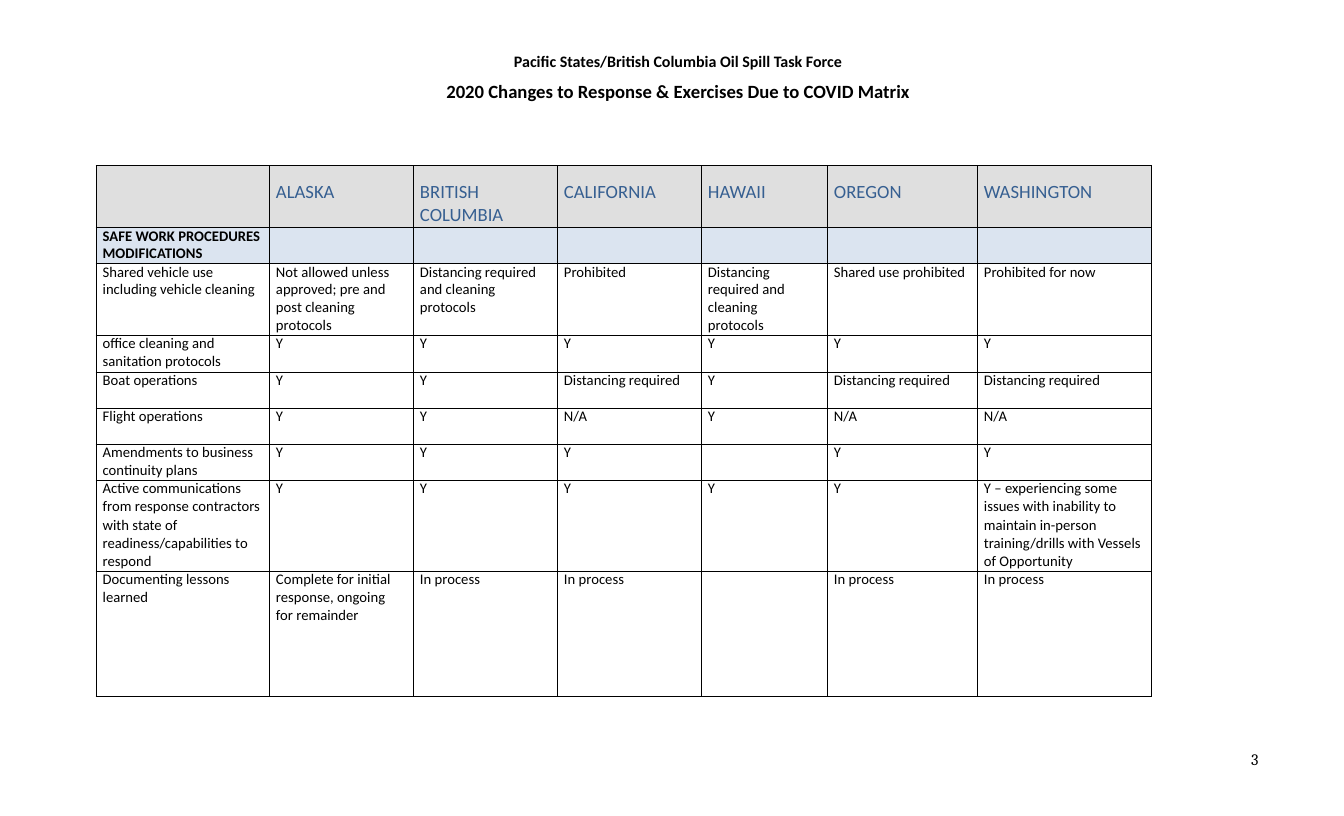
import pptx
import pptx.dml.color
import pptx.enum.text
import pptx.oxml
import pptx.oxml.ns
import pptx.util

Pt = pptx.util.Pt
ALIGN = pptx.enum.text.PP_ALIGN

COLUMNS = [130, 108, 108, 108, 94.5, 112.5, 130.5]
HEIGHTS = [46.5, 27, 54, 27.5, 27, 27.5, 27, 68, 94]
HEADINGS = ["", "ALASKA", "BRITISH COLUMBIA", "CALIFORNIA", "HAWAII", "OREGON", "WASHINGTON"]
SECTION = ["SAFE WORK PROCEDURES MODIFICATIONS"] + [""] * 6
SHARED = "Distancing required"
PROCEDURES = [
    ["Shared vehicle use including vehicle cleaning",
     "Not allowed unless approved; pre and\npost cleaning protocols",
     "Distancing required and cleaning\nprotocols", "Prohibited",
     "Distancing required and\ncleaning protocols", "Shared use prohibited",
     "Prohibited for now"],
    ["office cleaning and\nsanitation protocols"] + ["Y"] * 6,
    ["Boat operations", "Y", "Y", SHARED, "Y", SHARED, SHARED],
    ["Flight operations", "Y", "Y", "N/A", "Y", "N/A", "N/A"],
    ["Amendments to business\ncontinuity plans", "Y", "Y", "Y", "", "Y", "Y"],
    ["Active communications\nfrom response contractors with state of "
     "readiness/capabilities to respond"] + ["Y"] * 5 +
    ["Y – experiencing some\nissues with inability to maintain in-person "
     "training/drills with Vessels of Opportunity"],
    ["Documenting lessons\nlearned", "Complete for initial\nresponse, ongoing for remainder",
     "In process", "In process", "", "In process", "In process"],
]
RIGHT_MARGINS = {(2, 0): 6, (2, 2): 5, (2, 4): 20, (8, 1): 12}


def rgb(value):
    return pptx.dml.color.RGBColor.from_string(value)


class Sheet:
    ink = "000000"
    heading = "365F91"
    header_fill = "DFDFDF"
    section_fill = "DBE4F0"
    font = "Calibri"
    number_font = "Cambria"

    def __init__(self, slide):
        self.s = slide

    def run(self, p, text, size, color=None, bold=False, font=None):
        r = p.add_run()
        r.text = text
        r.font.size = Pt(size)
        r.font.name = font or self.font
        r.font.bold = bold
        r.font.color.rgb = rgb(color or self.ink)

    def text(self, x, y, w, h, lines, left=0, top=0, before=0, align=ALIGN.LEFT,
             bold=False, font=None):
        tf = self.s.shapes.add_textbox(Pt(x), Pt(y), Pt(w), Pt(h)).text_frame
        tf.word_wrap = False
        tf.margin_left, tf.margin_top = Pt(left), Pt(top)
        tf.margin_right = tf.margin_bottom = 0
        for i, (line, size) in enumerate(lines):
            p = tf.add_paragraph() if i else tf.paragraphs[0]
            p.alignment = align
            p.space_before = Pt(before)
            self.run(p, line, size, bold=bold, font=font)

    def border(self, cell):
        tcPr = cell._tc.get_or_add_tcPr()
        for i, side in enumerate(("lnL", "lnR", "lnT", "lnB")):
            tcPr.insert(i, pptx.oxml.parse_xml(
                f'<a:{side} {pptx.oxml.ns.nsdecls("a")} w="6350"><a:solidFill>'
                f'<a:srgbClr val="{self.ink}"/></a:solidFill></a:{side}>'))

    def cell(self, cell, text, size=11, color=None, bold=False, fill=None,
             top=0, right=0, leading=(12.9, 13.6)):
        cell.margin_left, cell.margin_top = Pt(5), Pt(top)
        cell.margin_right, cell.margin_bottom = Pt(right), 0
        if fill:
            cell.fill.solid()
            cell.fill.fore_color.rgb = rgb(fill)
        else:
            cell.fill.background()
        self.border(cell)
        tf = cell.text_frame
        for i, line in enumerate(text.split("\n") if text else []):
            p = tf.add_paragraph() if i else tf.paragraphs[0]
            if leading:
                p.line_spacing = Pt(leading[min(i, 1)])
            self.run(p, line, size, color, bold)

    def table(self, x, y, rows):
        tbl = self.s.shapes.add_table(len(rows), len(COLUMNS), Pt(x), Pt(y),
                                      Pt(sum(COLUMNS)), Pt(sum(HEIGHTS))).table
        tbl.first_row = tbl.horz_banding = False
        for column, width in zip(tbl.columns, COLUMNS):
            column.width = Pt(width)
        for row, height in zip(tbl.rows, HEIGHTS):
            row.height = Pt(height)
        styles = {
            0: dict(size=14, color=self.heading, fill=self.header_fill, top=11.5, leading=None),
            1: dict(bold=True, fill=self.section_fill, leading=(13.3, 13.3)),
            2: dict(leading=(13.3, 13.3)),
        }
        for i, row in enumerate(rows):
            for j, text in enumerate(row):
                self.cell(tbl.cell(i, j), text, right=RIGHT_MARGINS.get((i, j), 0),
                          **styles.get(i, {}))


def main():
    prs = pptx.Presentation()
    prs.slide_width, prs.slide_height = Pt(1008), Pt(612)
    sheet = Sheet(prs.slides.add_slide(prs.slide_layouts[6]))
    sheet.text(935.3, 561.6, 13, 16, [("3", 12)], left=3, top=0.7, font=sheet.number_font)
    sheet.text(333.4, 32.4, 350.6, 44.6,
               [("Pacific States/British Columbia Oil Spill Task Force", 12),
                ("2020 Changes to Response & Exercises Due to COVID Matrix", 14)],
               top=6.5, before=6.2, align=ALIGN.CENTER, bold=True)
    sheet.table(72, 124, [HEADINGS, SECTION] + PROCEDURES)
    prs.save("out.pptx")


if __name__ == "__main__":
    main()
